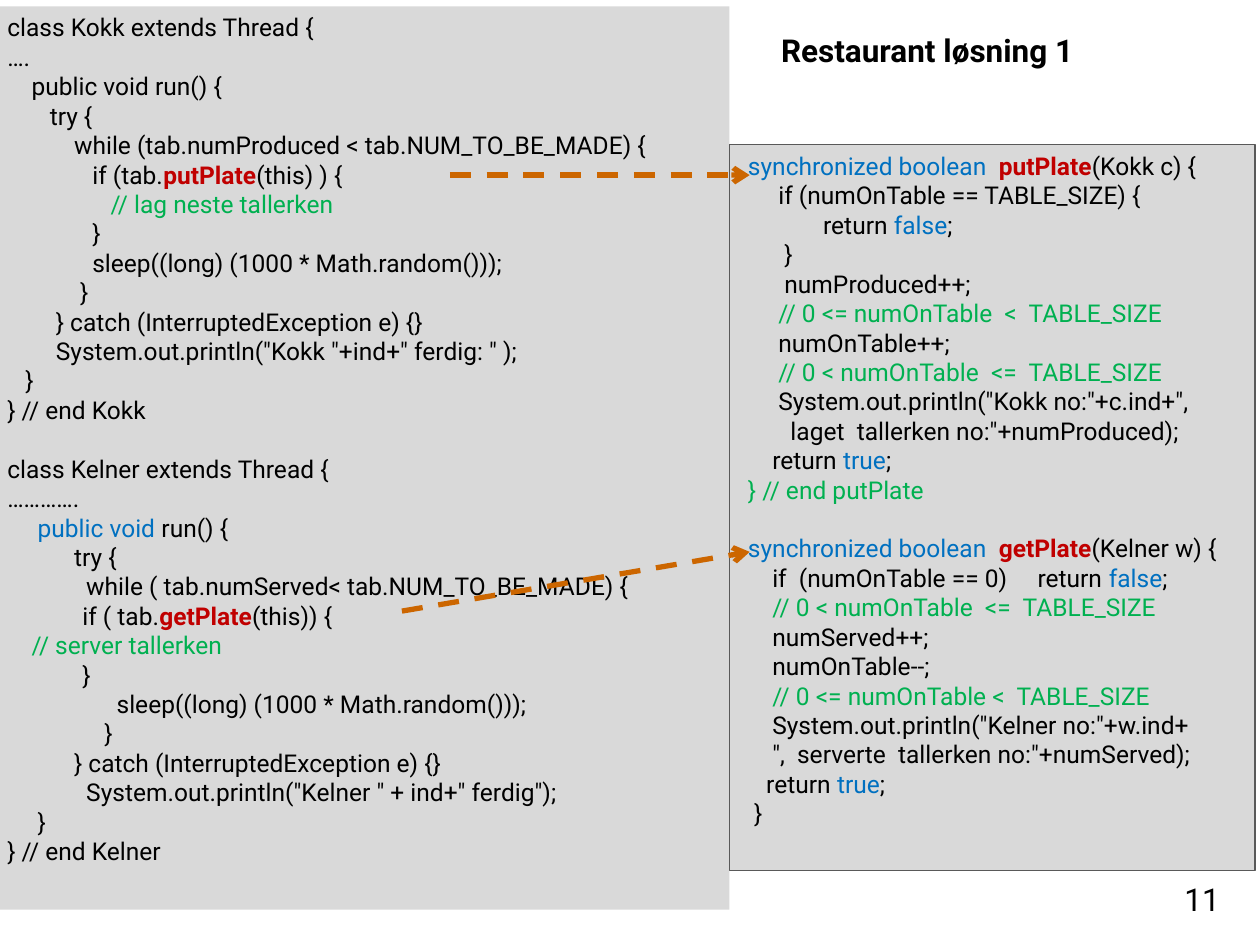
from lxml import etree
from pptx import Presentation
from pptx import util as u
from pptx.dml.color import RGBColor
from pptx.enum import dml, shapes, text
from pptx.oxml.ns import qn

BLACK = RGBColor(0x00, 0x00, 0x00)
BLUE = RGBColor(0x00, 0x70, 0xC0)
GREEN = RGBColor(0x00, 0xB0, 0x50)
RED = RGBColor(0xC0, 0x00, 0x00)
GREY = RGBColor(0xD9, 0xD9, 0xD9)
BORDER = RGBColor(0x59, 0x59, 0x59)
ORANGE = RGBColor(0xCC, 0x66, 0x00)

KOKK = [
    "class Kokk extends Thread {",
    "….",
    "    public void run() {",
    "       try {",
    "           while (tab.numProduced < tab.NUM_TO_BE_MADE) {",
    ["              if (tab.", ("putPlate", RED), "(this) ) {"],
    [("                 // lag neste tallerken", GREEN)],
    "              }",
    "              sleep((long) (1000 * Math.random()));",
    "            }",
    "        } catch (InterruptedException e) {}",
    '        System.out.println("Kokk "+ind+" ferdig: " );',
    "   }",
    "} // end Kokk",
]
KELNER = [
    "class Kelner extends Thread {",
    "………….",
    [("     public void ", BLUE), "run() {"],
    "           try {",
    "             while ( tab.numServed< tab.NUM_TO_BE_MADE) {",
    ["  \t  if ( tab.", ("getPlate", RED), "(this)) {"],
    [("    // server tallerken", GREEN)],
    "\t  }",
    "                  sleep((long) (1000 * Math.random()));",
    "                }",
    "           } catch (InterruptedException e) {}",
    '             System.out.println("Kelner " + ind+" ferdig");',
    "     }",
    "} // end Kelner",
]
PUT_PLATE = [
    [(" synchronized boolean  ", BLUE), ("putPlate", RED), "(Kokk c) {"],
    "      if (numOnTable == TABLE_SIZE) {",
    ["\t   return ", ("false", BLUE), ";"],
    "       }",
    "       numProduced++;",
    [("      // 0 <= numOnTable  <  TABLE_SIZE", GREEN)],
    "      numOnTable++;",
    [("      // 0 < numOnTable  <=  TABLE_SIZE", GREEN)],
    '      System.out.println("Kokk no:"+c.ind+",',
    '        laget  tallerken no:"+numProduced);',
    ["     return ", ("true", BLUE), ";"],
    [(" } // end putPlate", GREEN)],
]
GET_PLATE = [
    [(" synchronized boolean  ", BLUE), ("getPlate", RED), "(Kelner w) {"],
    ["     if  (numOnTable == 0)     return ", ("false", BLUE), ";"],
    [("     // 0 < numOnTable  <=  TABLE_SIZE", GREEN)],
    "     numServed++;",
    "     numOnTable--;",
    [("     // 0 <= numOnTable <  TABLE_SIZE", GREEN)],
    '     System.out.println("Kelner no:"+w.ind+',
    '     ",  serverte  tallerken no:"+numServed);',
    ["    return ", ("true", BLUE), ";"],
    "  }",
]


class Deck:
    """Draws code panels, labels and call arrows on the current slide."""

    font = {"name": "Roboto", "size": u.Pt(14), "bold": False}
    label_font = {"name": "Roboto", "size": u.Pt(18)}
    block_gap = u.Pt(16.8)

    def __init__(self, prs):
        self.s = prs.slides.add_slide(prs.slide_layouts[6])

    def run(self, p, words, color, fmt):
        r = p.add_run()
        r.text = words
        for key, value in fmt.items():
            setattr(r.font, key, value)
        r.font.color.rgb = color

    def label(self, box, words, **fmt):
        tf = self.s.shapes.add_textbox(*map(u.Inches, box)).text_frame
        tf.word_wrap = True
        self.run(tf.paragraphs[0], words, BLACK, {**self.label_font, **fmt})
        return tf

    def code(self, box, blocks, border=None):
        sp = self.s.shapes.add_shape(shapes.MSO_SHAPE.RECTANGLE, *map(u.Inches, box))
        sp.shadow.inherit = False
        sp.fill.solid()
        sp.fill.fore_color.rgb = GREY
        if border:
            sp.line.color.rgb = border
            sp.line.width = u.Pt(0.75)
        else:
            sp.line.fill.background()
        tf = sp.text_frame
        tf.word_wrap = True
        tf.vertical_anchor = text.MSO_ANCHOR.TOP
        for b, block in enumerate(blocks):
            for i, line in enumerate(block):
                p = tf.add_paragraph() if b or i else tf.paragraphs[0]
                p.alignment = text.PP_ALIGN.LEFT
                if b and not i:
                    p.space_before = self.block_gap
                for part in [line] if isinstance(line, str) else line:
                    words, color = (part, BLACK) if isinstance(part, str) else part
                    self.run(p, words, color, {**self.font, "bold": color == RED})

    def arrow(self, *ends):
        cx = self.s.shapes.add_connector(
            shapes.MSO_CONNECTOR.STRAIGHT, *map(u.Inches, ends))
        cx.line.color.rgb = ORANGE
        cx.line.width = u.Pt(3)
        cx.line.dash_style = dml.MSO_LINE.DASH
        etree.SubElement(cx.line._get_or_add_ln(), qn("a:tailEnd"), type="arrow")
        etree.SubElement(cx._element.spPr, qn("a:effectLst"))


def main():
    prs = Presentation()
    prs.slide_width, prs.slide_height = u.Inches(10), u.Inches(7.5)
    deck = Deck(prs)
    number = deck.label((7.7, 6.83, 2.08, 0.5), "11")
    number.vertical_anchor = text.MSO_ANCHOR.BOTTOM
    number.paragraphs[0].alignment = text.PP_ALIGN.RIGHT
    deck.code((-0.04, 0.05, 5.83, 7.17), [KOKK, KELNER])
    deck.code((5.79, 1.15, 4.17, 5.76), [PUT_PLATE, GET_PLATE], BORDER)
    deck.arrow(3.57, 1.39, 5.95, 1.39)
    deck.arrow(3.19, 4.85, 5.95, 4.38)
    deck.label((6.1, 0.2, 2.99, 0.4), "Restaurant løsning 1", bold=True)
    prs.save("out.pptx")


if __name__ == "__main__":
    main()
